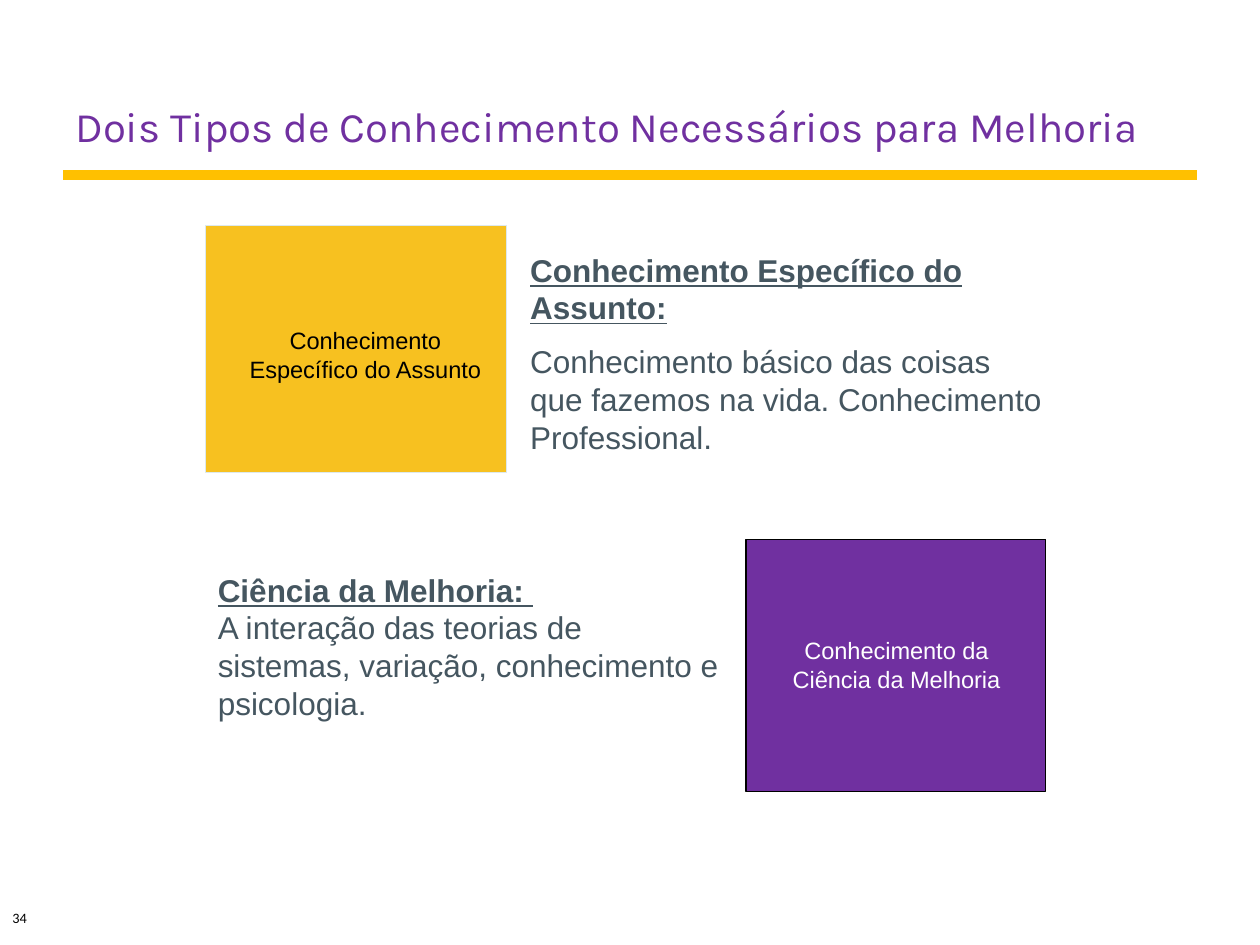
from pptx import Presentation
from pptx.dml.color import RGBColor
from pptx.enum.shapes import MSO_CONNECTOR, MSO_SHAPE
from pptx.enum.text import MSO_ANCHOR, PP_ALIGN
from pptx.oxml.ns import qn
from pptx.util import Inches, Pt
from lxml import etree

PURPLE = RGBColor(0x70, 0x30, 0xA0)
AMBER = RGBColor(0xFF, 0xC0, 0x00)
YELLOW = RGBColor(0xF7, 0xC1, 0x20)
PALE = RGBColor(0xDD, 0xE9, 0xEC)
SLATE = RGBColor(0x45, 0x56, 0x60)
BLACK = RGBColor(0, 0, 0)
WHITE = RGBColor(0xFF, 0xFF, 0xFF)


def add_text_frame(page, box):
    """Add a wrapping text box and return its text frame."""
    frame = page.shapes.add_textbox(*map(Inches, box)).text_frame
    frame.word_wrap = True
    return frame


def style(para, size, color, name="Arial"):
    """Set the font of a whole paragraph."""
    para.font.size = Pt(size)
    para.font.name = name
    para.font.color.rgb = color


def add_heading_span(para, text):
    """Add a bold underlined span to a paragraph."""
    span = para.add_run()
    span.text = text
    span.font.bold = True
    span.font.underline = True


def add_title(page, box, text):
    """Place the title with the amber rule below it."""
    left, top, width, height = box
    frame = add_text_frame(page, box)
    frame.vertical_anchor = MSO_ANCHOR.BOTTOM
    para = frame.paragraphs[0]
    para.text = text
    style(para, 24, PURPLE, "Karla")
    rule_y = Inches(top + height + 0.14)
    rule = page.shapes.add_connector(
        MSO_CONNECTOR.STRAIGHT, Inches(left), rule_y, Inches(left + width), rule_y)
    rule.line.color.rgb = AMBER
    rule.line.width = Pt(6)
    etree.SubElement(rule._element.spPr, qn("a:effectLst"))


def add_card(page, box, label_box, label, fill, outline, color):
    """Place a coloured rectangle with its centred label."""
    card = page.shapes.add_shape(MSO_SHAPE.RECTANGLE, *map(Inches, box))
    card.shadow.inherit = False
    card.fill.solid()
    card.fill.fore_color.rgb = fill
    card.line.color.rgb = outline
    card.line.width = Pt(0.75)
    para = add_text_frame(page, label_box).paragraphs[0]
    para.text = label
    para.alignment = PP_ALIGN.CENTER
    style(para, 13.5, color)


def add_subject_text(page, box):
    """Place the description of subject knowledge."""
    frame = add_text_frame(page, box)
    heading = frame.paragraphs[0]
    add_heading_span(heading, "Conhecimento Específico do Assunto:")
    body = frame.add_paragraph()
    body.text = "Conhecimento básico das coisas que fazemos na vida. Conhecimento Professional."
    body.space_before = Pt(9)
    for para in (heading, body):
        style(para, 18, SLATE)


def add_science_text(page, box):
    """Place the description of the science of improvement."""
    para = add_text_frame(page, box).paragraphs[0]
    add_heading_span(para, "Ciência da Melhoria: ")
    para.add_line_break()
    para.add_run().text = (
        "A interação das teorias de sistemas, variação, conhecimento e psicologia.")
    style(para, 18, SLATE)


def add_page_number(page, box, number):
    """Place the page number."""
    para = add_text_frame(page, box).paragraphs[0]
    para.text = number
    style(para, 8.2, BLACK, "Calibri")


def main():
    """Build and save the deck."""
    deck = Presentation()
    deck.slide_width, deck.slide_height = Inches(10), Inches(7.5)
    page = deck.slides.add_slide(deck.slide_layouts[6])
    add_title(page, (0.5, 0.25, 9, 1),
              "Dois Tipos de Conhecimento Necessários para Melhoria")
    add_card(page, (1.63, 1.79, 2.39, 1.96), (1.87, 2.54, 2.06, 0.56),
             "Conhecimento Específico do Assunto", YELLOW, PALE, BLACK)
    add_subject_text(page, (4.11, 1.94, 4.3, 1.77))
    add_science_text(page, (1.63, 4.48, 4.21, 1.31))
    add_card(page, (5.92, 4.28, 2.38, 2), (5.99, 5, 2.25, 0.56),
             "Conhecimento da Ciência da Melhoria", PURPLE, BLACK, WHITE)
    add_page_number(page, (0, 7.17, 0.57, 0.24), "34")
    deck.save("out.pptx")


if __name__ == "__main__":
    main()
